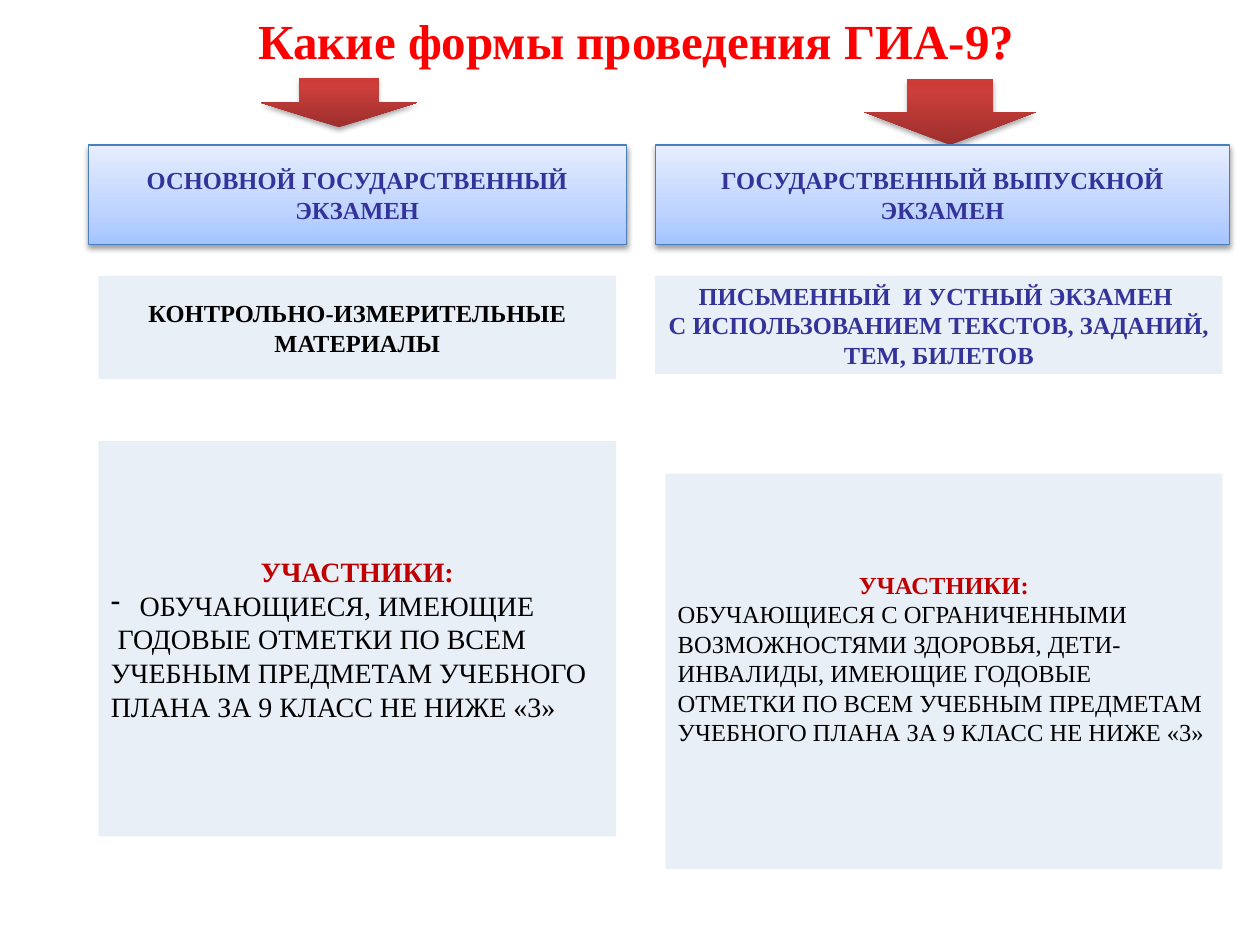
from lxml.etree import SubElement
from pptx import Presentation
from pptx.dml.color import RGBColor
from pptx.enum.shapes import MSO_SHAPE
from pptx.enum.text import MSO_ANCHOR, PP_ALIGN
from pptx.oxml import parse_xml
from pptx.oxml.ns import nsdecls, qn
from pptx.util import Pt

FONT = "Times New Roman"
COLORS = {
    "title": "FF0000",
    "heading": "333399",
    "accent": "C00000",
    "body": "000000",
    "panel": "B9CDE5",
    "border": "4B7EBC",
}
ARROW_STOPS = [(0, "9C2F2D"), (80, "CB3E3A"), (100, "CE3B37")]
HEADER_STOPS = [(0, "A4C4FF"), (35, "BFD4FF"), (100, "E6EEFF")]
PANEL_OPACITY = 31
HEADER_TOP, HEADER_HEIGHT = 82.8, 56.9
MATERIALS_TOP = 157.7
PARTICIPANTS_HEIGHT = 226

TITLE = ("Какие формы проведения ГИА-9?", "title", True, "center")
EXAMS = [
    {
        "arrow": (149, 44.7, 89.4, 28),
        "header": (50.4, 307.5),
        "name": [("ОСНОВНОЙ ГОСУДАРСТВЕННЫЙ ЭКЗАМЕН", "heading", True, "center")],
        "materials_box": (56.2, 295.9, 59),
        "materials": [("КОНТРОЛЬНО-ИЗМЕРИТЕЛЬНЫЕ МАТЕРИАЛЫ", "body", True, "center")],
        "participants_box": (56.2, 252, 295.9),
        "participants_size": 16,
        "bottom_inset": 3.6,
        "participants": [
            ("УЧАСТНИКИ:", "accent", True, "center"),
            ("ОБУЧАЮЩИЕСЯ, ИМЕЮЩИЕ", "body", False, "bullet"),
            (" ГОДОВЫЕ ОТМЕТКИ ПО ВСЕМ УЧЕБНЫМ ПРЕДМЕТАМ УЧЕБНОГО "
             "ПЛАНА ЗА 9 КЛАСС НЕ НИЖЕ «3»", "body", False, "left"),
        ],
    },
    {
        "arrow": (494, 45.4, 97.9, 37.4),
        "header": (374.4, 328.3),
        "name": [("ГОСУДАРСТВЕННЫЙ ВЫПУСКНОЙ ЭКЗАМЕН", "heading", True, "center")],
        "materials_box": (374.4, 324.2, 56),
        "materials": [
            ("ПИСЬМЕННЫЙ  И УСТНЫЙ ЭКЗАМЕН ", "heading", True, "center"),
            ("С ИСПОЛЬЗОВАНИЕМ ТЕКСТОВ, ЗАДАНИЙ, ТЕМ, БИЛЕТОВ",
             "heading", True, "center"),
        ],
        "participants_box": (380.2, 270.7, 318.4),
        "participants_size": 14,
        "bottom_inset": 18.6,
        "participants": [
            ("УЧАСТНИКИ:", "accent", True, "center"),
            ("ОБУЧАЮЩИЕСЯ С ОГРАНИЧЕННЫМИ ВОЗМОЖНОСТЯМИ ЗДОРОВЬЯ, "
             "ДЕТИ-ИНВАЛИДЫ, ИМЕЮЩИЕ ГОДОВЫЕ ОТМЕТКИ ПО ВСЕМ УЧЕБНЫМ "
             "ПРЕДМЕТАМ УЧЕБНОГО ПЛАНА ЗА 9 КЛАСС НЕ НИЖЕ «3»",
             "body", False, "left"),
        ],
    },
]


def write_text(shape, lines, size, bottom_inset=3.6):
    frame = shape.text_frame
    frame.word_wrap = True
    frame.vertical_anchor = MSO_ANCHOR.MIDDLE
    frame.margin_bottom = Pt(bottom_inset)
    for index, (text, color, bold, style) in enumerate(lines):
        paragraph = frame.add_paragraph() if index else frame.paragraphs[0]
        paragraph.alignment = PP_ALIGN.CENTER if style == "center" else PP_ALIGN.LEFT
        if style == "bullet":
            properties = paragraph._p.get_or_add_pPr()
            properties.set("marL", str(Pt(16.5)))
            properties.set("indent", str(-Pt(16.5)))
            SubElement(properties, qn("a:buFontTx"))
            SubElement(properties, qn("a:buChar"), char="-")
        run = paragraph.add_run()
        run.text = text
        run.font.name = FONT
        run.font.size = Pt(size)
        run.font.bold = bold
        run.font.color.rgb = RGBColor.from_string(COLORS[color])


def add_box(slide, kind, box):
    shape = slide.shapes.add_shape(kind, *map(Pt, box))
    shape.shadow.inherit = False
    shape.line.fill.background()
    return shape


def fill_gradient(shape, stops):
    shape.fill.gradient()
    gradient = shape._element.spPr.find(qn("a:gradFill"))
    marks = "".join(
        f'<a:gs pos="{position * 1000}"><a:srgbClr val="{color}"/></a:gs>'
        for position, color in stops
    )
    gradient.getparent().replace(gradient, parse_xml(
        f'<a:gradFill {nsdecls("a")} rotWithShape="1"><a:gsLst>{marks}</a:gsLst>'
        '<a:lin ang="16200000" scaled="0"/></a:gradFill>'
    ))


def add_shadow(shape, opacity, distance):
    effects = shape._element.spPr.find(qn("a:effectLst"))
    effects.append(parse_xml(
        f'<a:outerShdw {nsdecls("a")} blurRad="{Pt(3.1)}" dist="{Pt(distance)}" '
        'dir="5400000" rotWithShape="0"><a:srgbClr val="000000">'
        f'<a:alpha val="{opacity * 1000}"/></a:srgbClr></a:outerShdw>'
    ))


def add_panel(slide, box, lines, size, bottom_inset=3.6):
    panel = add_box(slide, MSO_SHAPE.RECTANGLE, box)
    panel.fill.solid()
    panel.fill.fore_color.rgb = RGBColor.from_string(COLORS["panel"])
    color = panel._element.spPr.find(qn("a:solidFill")).find(qn("a:srgbClr"))
    SubElement(color, qn("a:alpha"), val=str(PANEL_OPACITY * 1000))
    write_text(panel, lines, size, bottom_inset)


def add_exam(slide, exam):
    arrow = add_box(slide, MSO_SHAPE.DOWN_ARROW, exam["arrow"])
    fill_gradient(arrow, ARROW_STOPS)
    add_shadow(arrow, 35, 1.8)

    left, width = exam["header"]
    header = add_box(slide, MSO_SHAPE.RECTANGLE,
                     (left, HEADER_TOP, width, HEADER_HEIGHT))
    fill_gradient(header, HEADER_STOPS)
    header.line.color.rgb = RGBColor.from_string(COLORS["border"])
    header.line.width = Pt(0.75)
    add_shadow(header, 38, 1.6)
    write_text(header, exam["name"], 14)

    left, width, height = exam["materials_box"]
    add_panel(slide, (left, MATERIALS_TOP, width, height), exam["materials"], 14)

    left, top, width = exam["participants_box"]
    add_panel(slide, (left, top, width, PARTICIPANTS_HEIGHT), exam["participants"],
              exam["participants_size"], exam["bottom_inset"])


def main():
    presentation = Presentation()
    presentation.slide_width, presentation.slide_height = Pt(720), Pt(540)
    slide = presentation.slides.add_slide(presentation.slide_layouts[6])
    title = slide.shapes.add_textbox(Pt(39.6), Pt(0), Pt(648), Pt(46))
    write_text(title, [TITLE], 28)
    for exam in EXAMS:
        add_exam(slide, exam)
    presentation.save("out.pptx")


if __name__ == "__main__":
    main()
